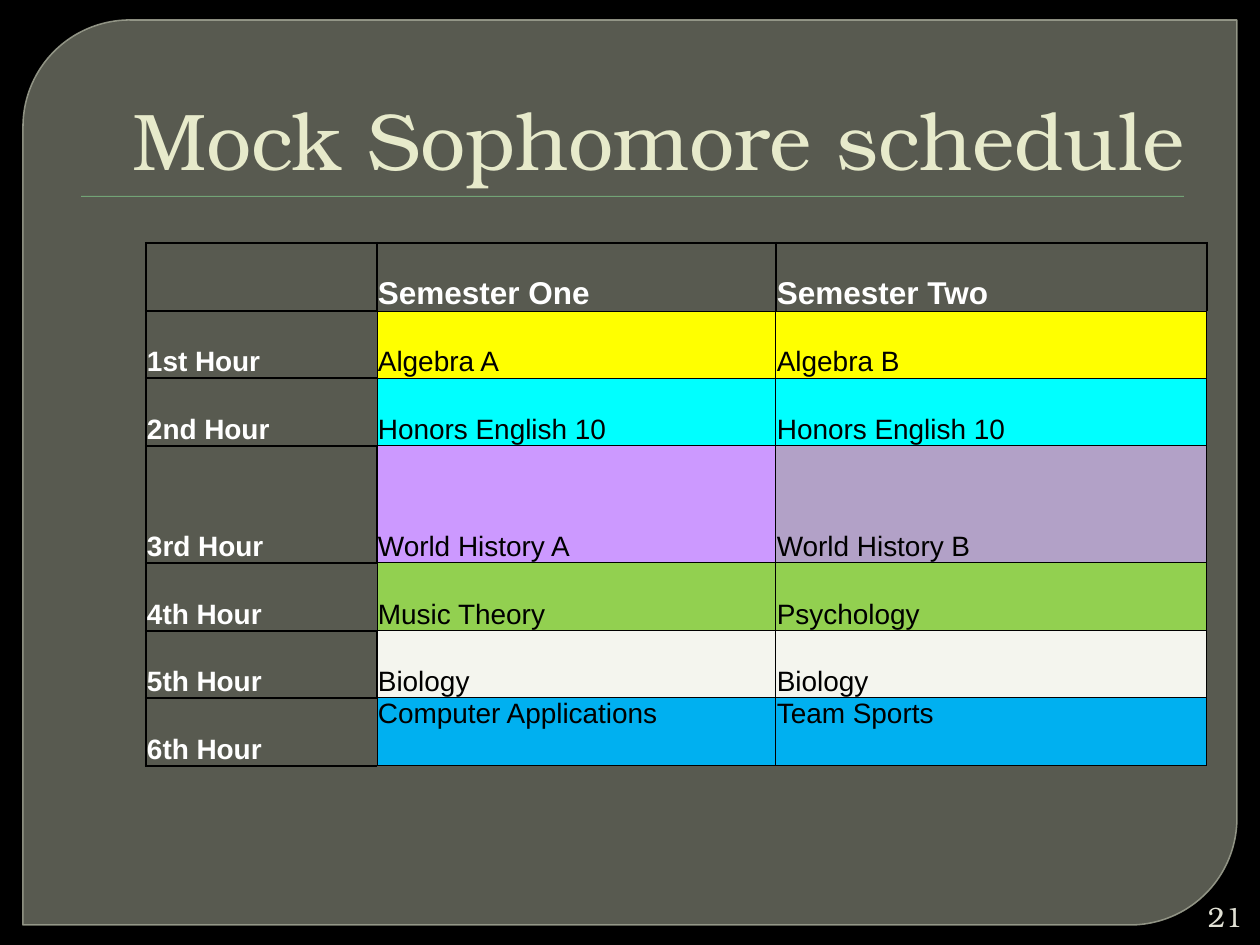
from lxml.etree import SubElement
from pptx import Presentation
from pptx.dml.color import RGBColor
from pptx.enum.shapes import MSO_SHAPE as Shape
from pptx.enum.text import MSO_ANCHOR as Anchor, PP_ALIGN as Align
from pptx.oxml.ns import qn
from pptx.util import Pt

PX = 914400 // 126
BLACK = RGBColor(0x00, 0x00, 0x00)
WHITE = RGBColor(0xFF, 0xFF, 0xFF)
PANEL = RGBColor(0x88, 0x8B, 0x7B)
PANEL_EDGE = RGBColor(0x9D, 0xA0, 0x90)
RULE = RGBColor(0x72, 0xA3, 0x76)
TITLE = RGBColor(0xE7, 0xEA, 0xCB)
NUMBER = RGBColor(0xE0, 0xE0, 0xD4)
YELLOW = RGBColor(0xFF, 0xFF, 0x00)
CYAN = RGBColor(0x00, 0xFF, 0xFF)
LILAC = RGBColor(0xCC, 0x99, 0xFF)
MAUVE = RGBColor(0xB2, 0xA1, 0xC7)
GREEN = RGBColor(0x92, 0xD0, 0x50)
IVORY = RGBColor(0xF4, 0xF5, 0xEE)
BLUE = RGBColor(0x00, 0xB0, 0xF0)


def write(paragraph, text, color, **font):
    span = paragraph.add_run()
    span.text = text
    span.font.color.rgb = color
    for name, value in font.items():
        setattr(span.font, name, value)


def set_borders(cell, widths):
    properties = cell._tc.get_or_add_tcPr()
    for side, width in zip("LRTB", widths):
        line = SubElement(properties, qn(f"a:ln{side}"), w=str(Pt(width)))
        fill = SubElement(line, qn("a:solidFill"))
        SubElement(fill, qn("a:srgbClr"), val=str(BLACK))


deck = Presentation()
deck.slide_width, deck.slide_height = 1260 * PX, 945 * PX
page = deck.slides.add_slide(deck.slide_layouts[6])
page.background.fill.solid()
page.background.fill.fore_color.rgb = BLACK

panel = page.shapes.add_shape(Shape.ROUND_2_DIAG_RECTANGLE, 23 * PX, 20 * PX, 1214 * PX, 905 * PX)
panel.adjustments[0] = 0.118
panel.adjustments[1] = 0
panel.line.color.rgb = PANEL_EDGE
panel.line.width = Pt(0.87)
rule = page.shapes.add_shape(Shape.RECTANGLE, 81 * PX, 196 * PX, 1103 * PX, 1 * PX)
rule.line.fill.background()
for shape, color in ((panel, PANEL), (rule, RULE)):
    shape.shadow.inherit = False
    shape.fill.solid()
    shape.fill.fore_color.rgb = color
colors = panel._element.spPr.iter(qn("a:srgbClr"))
for color, opacity in zip(list(colors), (65, 88)):
    SubElement(color, qn("a:alpha"), val=str(opacity * 1000))

for text, place, anchor, size, color in (
    ("Mock Sophomore schedule", (63, 35, 1134, 158), Anchor.BOTTOM, 46, TITLE),
    ("21", (1191, 897, 64, 38), Anchor.MIDDLE, 16, NUMBER),
):
    box = page.shapes.add_textbox(*(length * PX for length in place))
    frame = box.text_frame
    frame.word_wrap = True
    frame.vertical_anchor = anchor
    para = frame.paragraphs[0]
    para.alignment = Align.RIGHT
    write(para, text, color, size=Pt(size), name="TeX Gyre Bonum")

schedule = (
    ("", "Semester One", "Semester Two", None, None),
    ("1st Hour", "Algebra A", "Algebra B", YELLOW, YELLOW),
    ("2nd Hour", "Honors English 10", "Honors English 10", CYAN, CYAN),
    ("3rd Hour", "World History A", "World History B", LILAC, MAUVE),
    ("4th Hour", "Music Theory", "Psychology", GREEN, GREEN),
    ("5th Hour", "Biology", "Biology", IVORY, IVORY),
    ("6th Hour", "Computer Applications", "Team Sports", BLUE, BLUE),
)
widths = (231, 282, 117, 431)
heights = (68, 67, 68, 117, 68, 67, 68)
table = page.shapes.add_table(
    len(heights), len(widths), 146 * PX, 243 * PX, sum(widths) * PX, sum(heights) * PX
).table
table.first_row = table.horz_banding = False
for column, width in zip(table.columns, widths):
    column.width = width * PX
for row, height in zip(table.rows, heights):
    row.height = height * PX

cell_format = {"margin_left": PX, "margin_right": PX, "margin_top": PX, "margin_bottom": 0}
for row, (hour, first, second, first_fill, second_fill) in enumerate(schedule):
    table.cell(row, 1).merge(table.cell(row, 2))
    thick_divider = row in (0, 3, 5)
    for column, text, fill in ((0, hour, None), (1, first, first_fill), (3, second, second_fill)):
        cell = table.cell(row, column)
        for name, value in cell_format.items():
            setattr(cell, name, value)
        is_course = fill is not None
        top_text = is_course and row == len(schedule) - 1
        cell.vertical_anchor = Anchor.TOP if top_text else Anchor.BOTTOM
        if column == 0:
            set_borders(cell, (1.5, 1.5 if thick_divider else 0.5, 1.5, 1.5))
        elif row == 0:
            set_borders(cell, (1.5, 1.5, 1.5, 0.5))
        else:
            set_borders(cell, (1.5 if thick_divider and column == 1 else 0.5, 0.5, 0.5, 0.5))
        if is_course:
            cell.fill.solid()
            cell.fill.fore_color.rgb = fill
        else:
            cell.fill.background()
        if text:
            para = cell.text_frame.paragraphs[0]
            size = Pt(18 if row == 0 else 16)
            para.space_before = int(size * 0.2)
            write(para, text, BLACK if is_course else WHITE, size=size, name="Arial", bold=not is_course)

deck.save("out.pptx")
